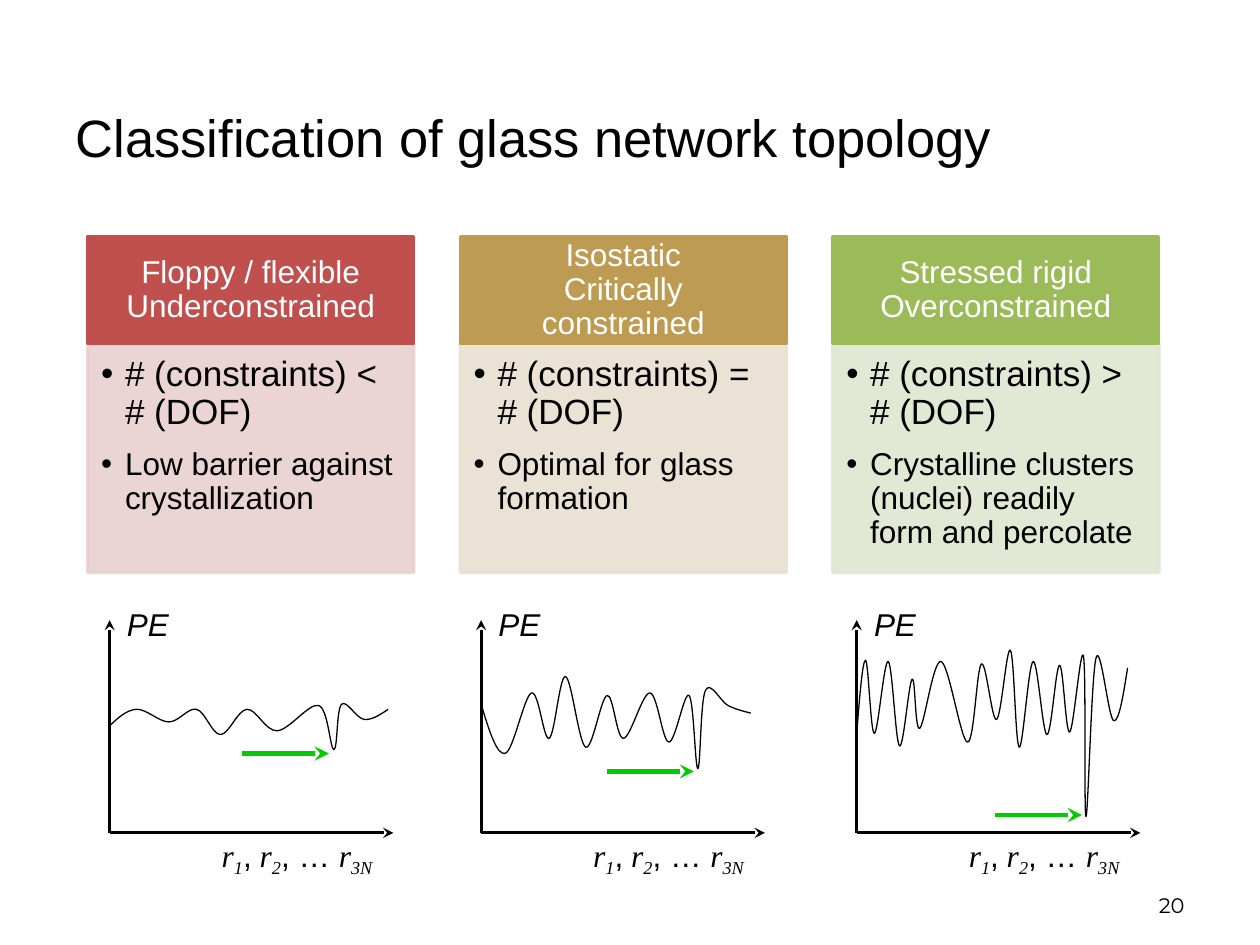
from lxml import etree
from pptx import Presentation
from pptx.dml.color import RGBColor
from pptx.enum.shapes import MSO_CONNECTOR, MSO_SHAPE
from pptx.enum.text import MSO_ANCHOR, MSO_AUTO_SIZE, PP_ALIGN
from pptx.oxml.ns import qn
from pptx.util import Cm, Pt

LEFT, CENTER, RIGHT = PP_ALIGN.LEFT, PP_ALIGN.CENTER, PP_ALIGN.RIGHT
TOP, MIDDLE, BOTTOM = MSO_ANCHOR.TOP, MSO_ANCHOR.MIDDLE, MSO_ANCHOR.BOTTOM
FIXED = MSO_AUTO_SIZE.NONE
RECT, STRAIGHT = MSO_SHAPE.RECTANGLE, MSO_CONNECTOR.STRAIGHT

BLACK = RGBColor(0x00, 0x00, 0x00)
WHITE = RGBColor(0xFF, 0xFF, 0xFF)
GREEN = RGBColor(0x00, 0xCC, 0x00)
RED = RGBColor(0xC0, 0x50, 0x4D)
PINK = RGBColor(0xE8, 0xD0, 0xD0)
GOLD = RGBColor(0xBD, 0x9B, 0x53)
SAND = RGBColor(0xE8, 0xE1, 0xD1)
LEAF = RGBColor(0x9B, 0xBB, 0x59)
MINT = RGBColor(0xDE, 0xE7, 0xD1)

# Card grid and plot sizes in cm
CARD_X, STEP, CARD_W = 1.77, 7.51, 6.57
HEAD_Y, HEAD_H, BODY_H = 4.77, 2.15, 4.62
AXIS_Y, AXIS_W, AXIS_H = 16.79, 5.72, 4.29
UNIT = 0.0254  # one wave unit in cm

HEAD_BOX = dict(margin_left=Cm(0.36), margin_right=Cm(0.36),
                margin_top=Cm(0.2), margin_bottom=Cm(0.2),
                vertical_anchor=MIDDLE, word_wrap=True)
BODY_BOX = dict(margin_left=Cm(0.27), margin_right=Cm(0.36),
                margin_top=Cm(0.27), margin_bottom=Cm(0.4),
                vertical_anchor=TOP, word_wrap=True, auto_size=FIXED)

# Heading, list, colours, plot x, green arrow (x, rise), wave knots
CARDS = [
    (["Floppy / flexible", "Underconstrained"],
     ["# (constraints) < # (DOF)", "Low barrier against crystallization"],
     RED, PINK, 2.21, (2.67, 1.6),
     [(-1, 84), (21, 98), (47, 88), (69, 98), (88, 78), (109, 98), (133, 81),
      (166, 101), (178, 66), (184, 102), (202, 90), (221, 98)]),
    (["Isostatic", "Critically constrained"],
     ["# (constraints) = # (DOF)", "Optimal for glass formation"],
     GOLD, SAND, 9.7, (2.54, 1.24),
     [(0, 102), (19, 63), (40, 111), (54, 75), (67, 124), (83, 68),
      (100, 109), (113, 75), (134, 111), (149, 72), (165, 109), (172, 51),
      (178, 113), (196, 101), (214, 95)]),
    (["Stressed rigid", "Overconstrained"],
     ["# (constraints) > # (DOF)",
      "Crystalline clusters (nuclei) readily form and percolate"],
     LEAF, MINT, 17.27, (2.79, 0.36),
     [(0, 79), (7, 137), (14, 79), (25, 136), (34, 69), (44, 122), (50, 83),
      (67, 136), (88, 72), (99, 134), (111, 90), (122, 145), (129, 68),
      (140, 136), (151, 78), (161, 133), (169, 80), (180, 140), (182, 13),
      (190, 139), (204, 89), (215, 131)]),
]

# Text, is variable, is subscript
COORDS = [("r", True, False), ("1", True, True), (",", False, False),
          (" r", True, False), ("2", True, True), (", … ", False, False),
          ("r", True, False), ("3N", True, True)]


def apply(obj, **vals):
    for key, val in vals.items():
        setattr(obj, key, val)


def place(shape, x, y, w, h):
    apply(shape, left=Cm(x), top=Cm(y), width=Cm(w), height=Cm(h))


def write(para, text, size, color=BLACK, name="Arial", italic=False):
    run = para.add_run()
    run.text = text
    apply(run.font, size=Pt(size), name=name, italic=italic, bold=False)
    run.font.color.rgb = color
    return run


def lines(frame, count):
    """Return the given number of paragraphs, the first one reused."""
    return [frame.paragraphs[0]] + [frame.add_paragraph()
                                    for _ in range(count - 1)]


def label(slide, x, y, w, h, wrap=False, anchor=TOP):
    box = slide.shapes.add_textbox(Cm(x), Cm(y), Cm(w), Cm(h))
    apply(box.text_frame, word_wrap=wrap, vertical_anchor=anchor)
    return box.text_frame.paragraphs[0]


def paint(shape, color):
    shape.fill.solid()
    shape.fill.fore_color.rgb = color
    shape.line.color.rgb = color
    shape.line.width = Pt(2)


def heading(slide, x, texts, color):
    box = slide.shapes.add_shape(RECT, Cm(x), Cm(HEAD_Y), Cm(CARD_W), Cm(HEAD_H))
    box.shadow.inherit = False
    paint(box, color)
    apply(box.text_frame, **HEAD_BOX)
    for para, text in zip(lines(box.text_frame, len(texts)), texts):
        apply(para, alignment=CENTER, line_spacing=0.9)
        write(para, text, 18, WHITE)


def bullets(body, x, items, color):
    place(body, x, HEAD_Y + HEAD_H, CARD_W, BODY_H)
    paint(body, color)
    for tone in body.element.spPr.iter(qn("a:srgbClr")):
        etree.SubElement(tone, qn("a:alpha"), val="90000")
    apply(body.text_frame, **BODY_BOX)
    paras = lines(body.text_frame, len(items))
    for para, text, size, gap in zip(paras, items, (20, 18), (0, 6)):
        apply(para, alignment=LEFT, line_spacing=0.9,
              space_before=Pt(gap), space_after=Pt(3))
        props = para._p.get_or_add_pPr()
        props.set("marL", str(Cm(0.48)))
        props.set("indent", str(-Cm(0.48)))
        etree.SubElement(props, qn("a:buFont"), typeface="Arial")
        etree.SubElement(props, qn("a:buChar"), char="•")
        write(para, text, size)


def arrow(slide, x1, y1, x2, y2, color=BLACK, width=1.75):
    link = slide.shapes.add_connector(STRAIGHT, Cm(x1), Cm(y1), Cm(x2), Cm(y2))
    link.line.color.rgb = color
    link.line.width = Pt(width)
    etree.SubElement(link.line._get_or_add_ln(), qn("a:tailEnd"), type="stealth")
    etree.SubElement(link.element.spPr, qn("a:effectLst"))


def wave(slide, x, knots):
    """Draw a smooth curve through the knots, given from the plot origin."""
    pts = [(Cm(x + a * UNIT), Cm(AXIS_Y - b * UNIT)) for a, b in knots]
    pen = slide.shapes.build_freeform(*pts[0])
    pen.add_line_segments(pts[1:], close=False)
    curve = pen.convert_to_shape()
    curve.shadow.inherit = False
    curve.fill.background()
    curve.line.color.rgb = BLACK
    curve.line.width = Pt(0.75)

    # Turn each straight segment into a Catmull-Rom Bezier segment
    pts = [(int(p.get("x")), int(p.get("y")))
           for p in curve.element.iter(qn("a:pt"))]
    last = len(pts) - 1

    def handle(i, sign):
        return tuple(c + sign * (n - p) / 6
                     for p, c, n in zip(pts[i - 1], pts[i], pts[i + 1]))

    def mid(a, b):
        return tuple((u + v) / 2 for u, v in zip(a, b))

    for i, seg in enumerate(list(curve.element.iter(qn("a:lnTo")))):
        out = handle(i, 1) if i else mid(pts[0], handle(1, -1))
        into = handle(i + 1, -1) if i + 1 < last else mid(out, pts[last])
        bez = etree.Element(qn("a:cubicBezTo"))
        for a, b in (out, into, pts[i + 1]):
            etree.SubElement(bez, qn("a:pt"), x=str(round(a)), y=str(round(b)))
        seg.getparent().replace(seg, bez)


def plot(slide, x, mark, knots):
    arrow(slide, x, AXIS_Y, x, AXIS_Y - AXIS_H)
    arrow(slide, x, AXIS_Y, x + AXIS_W, AXIS_Y)
    write(label(slide, x + 0.1, 12.07, 1.37, 1.02), "PE", 18, italic=True)
    para = label(slide, x + 2.01, 16.72, 3.71, 1.02)
    for text, var, sub in COORDS:
        name = "Times New Roman" if var else "Arial"
        run = write(para, text, 18, name=name, italic=var)
        if sub:
            run.font._element.set("baseline", "-25000")
    start, y = x + mark[0], AXIS_Y - mark[1]
    arrow(slide, start, y, start + 1.75, y, GREEN, 2.75)
    wave(slide, x, knots)


def main():
    deck = Presentation()
    apply(deck, slide_width=Cm(25.4), slide_height=Cm(19.05))
    slide = deck.slides.add_slide(deck.slide_layouts[4])

    # Title
    title, *bodies = slide.placeholders
    place(title, 1.27, 1.27, 22.43, 2.97)
    apply(title.text_frame, vertical_anchor=MIDDLE, auto_size=FIXED)
    para = title.text_frame.paragraphs[0]
    para.alignment = LEFT
    write(para, "Classification of glass network topology", 30)

    # Three cards, each with its energy plot
    for i, (head, items, dark, pale, x, mark, knots) in enumerate(CARDS):
        left = CARD_X + i * STEP
        heading(slide, left, head, dark)
        bullets(bodies[i], left, items, pale)
        plot(slide, x, mark, knots)
    spare = bodies[-1].element
    spare.getparent().remove(spare)

    # Slide number
    para = label(slide, 18.21, 17.35, 5.92, 1.27, wrap=True, anchor=BOTTOM)
    para.alignment = RIGHT
    write(para, "20", 12, name="Montserrat")
    deck.save("out.pptx")


if __name__ == "__main__":
    main()
